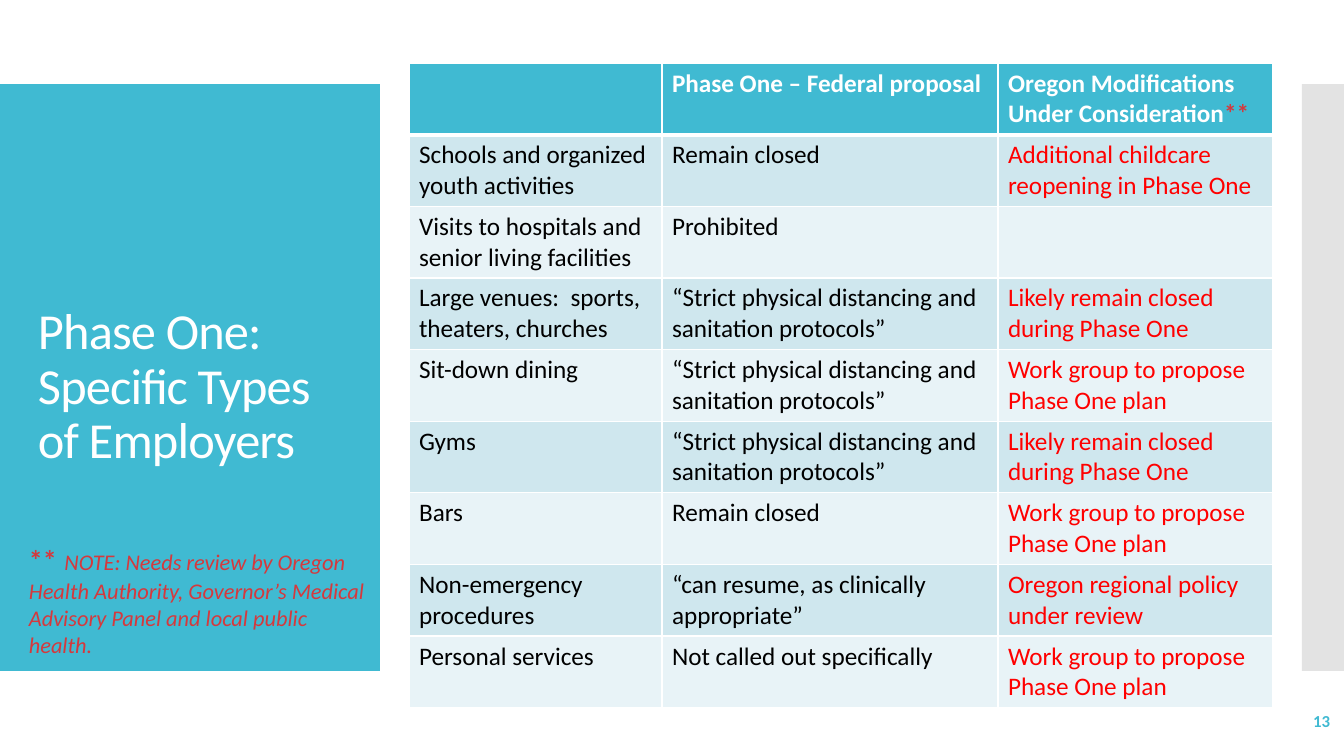
from lxml.etree import SubElement
from pptx import Presentation
from pptx.dml.color import RGBColor
from pptx.enum.shapes import MSO_SHAPE as Shape
from pptx.enum.text import MSO_ANCHOR as Anchor, PP_ALIGN as Align
from pptx.oxml.ns import qn
from pptx.util import Pt

EMU_PER_PX = 914400 / 100.8
COLORS = {
    "teal": "40BAD2", "gray": "C8C8C8", "white": "FFFFFF", "black": "000000",
    "red": "FF0000", "note": "D5393D", "band": "CFE7EE", "pale": "E8F3F7",
}
HEADER = ["", "Phase One – Federal proposal", "Oregon Modifications Under Consideration"]
DISTANCING = "“Strict physical distancing and sanitation protocols”"
LIKELY_CLOSED = "Likely remain closed during Phase One"
WORK_GROUP = "Work group to propose Phase One plan"
EMPLOYERS = [
    ["Schools and organized youth activities", "Remain closed",
     "Additional childcare reopening in Phase One"],
    ["Visits to hospitals and senior living facilities", "Prohibited", ""],
    ["Large venues:  sports, theaters, churches", DISTANCING, LIKELY_CLOSED],
    ["Sit-down dining", DISTANCING, WORK_GROUP],
    ["Gyms", DISTANCING, LIKELY_CLOSED],
    ["Bars", "Remain closed", WORK_GROUP],
    ["Non-emergency procedures", "“can resume, as clinically appropriate”",
     "Oregon regional policy under review"],
    ["Personal services", "Not called out specifically", WORK_GROUP],
]


def px(length):
    return round(length * EMU_PER_PX)


def rgb(name):
    return RGBColor.from_string(COLORS[name])


class SlideBuilder:
    font = "Calibri"

    def __init__(self, deck):
        self.slide = deck.slides.add_slide(deck.slide_layouts[6])

    def style(self, run, size, color, bold=False, italic=False):
        run.font.name = self.font
        run.font.size = Pt(size)
        run.font.bold = bold
        run.font.italic = italic
        run.font.color.rgb = rgb(color)

    def panel(self, box, color, opacity=100):
        panel = self.slide.shapes.add_shape(Shape.RECTANGLE, *map(px, box))
        panel.shadow.inherit = False
        panel.fill.solid()
        panel.fill.fore_color.rgb = rgb(color)
        panel.line.fill.background()
        if opacity < 100:
            tint = panel.fill._xPr.find(".//" + qn("a:srgbClr"))
            SubElement(tint, qn("a:alpha"), val=str(opacity * 1000))

    def text(self, box, runs, anchor=Anchor.MIDDLE, align=Align.LEFT, leading=1.0, spacing=0):
        frame = self.slide.shapes.add_textbox(*map(px, box)).text_frame
        frame.word_wrap = True
        frame.vertical_anchor = anchor
        paragraph = frame.paragraphs[0]
        paragraph.alignment = align
        paragraph.line_spacing = leading
        for words, *look in runs:
            run = paragraph.add_run()
            run.text = words
            self.style(run, *look)
            if spacing:
                run.font._element.set("spc", str(spacing))

    def cell(self, cell, words, fill, color, header=False):
        cell.text = words
        for run in cell.text_frame.paragraphs[0].runs:
            self.style(run, 18, color, header)
        properties = cell._tc.get_or_add_tcPr()
        for side in "LRTB":
            width = 3 if header and side == "B" else 1
            border = SubElement(properties, qn(f"a:ln{side}"), w=str(Pt(width)))
            paint = SubElement(border, qn("a:solidFill"))
            SubElement(paint, qn("a:srgbClr"), val=COLORS["white"])
        cell.fill.solid()
        cell.fill.fore_color.rgb = rgb(fill)

    def table(self, left, top, widths, row_height, header, rows):
        count = len(rows) + 1
        table = self.slide.shapes.add_table(
            count, len(widths), px(left), px(top), px(sum(widths)), px(row_height * count)
        ).table
        for column, width in zip(table.columns, widths):
            column.width = px(width)
        for row in table.rows:
            row.height = px(row_height)
        for c, words in enumerate(header):
            self.cell(table.cell(0, c), words, "teal", "white", header=True)
        for r, row in enumerate(rows, 1):
            for c, words in enumerate(row):
                self.cell(table.cell(r, c), words, "band" if r % 2 else "pale",
                          "red" if c == 2 else "black")
        return table


def main():
    deck = Presentation()
    deck.slide_width, deck.slide_height = px(1344), px(756)
    page = SlideBuilder(deck)
    page.panel((0, 84, 380, 587), "teal")
    page.panel((1302, 84, 42, 587), "gray", opacity=50)

    employers = page.table(409, 63, [253, 336, 275], 71, HEADER, EMPLOYERS)
    footnote_mark = employers.cell(0, 2).text_frame.paragraphs[0].add_run()
    footnote_mark.text = "**"
    page.style(footnote_mark, 18, "note", bold=True)

    page.text((1172, 701, 168, 40), [("13", 12, "teal", True)], align=Align.RIGHT)
    page.text((28, 283, 325, 210),
              [("Phase One: Specific Types of Employers", 36, "white")],
              leading=0.9, spacing=-60)
    page.text((19, 532, 362, 132), [
        ("**", 20, "note", True),
        (" ", 24, "note", True),
        ("NOTE: Needs review by Oregon Health Authority, Governor’s Medical "
         "Advisory Panel and local public health.", 16, "note", False, True),
    ], anchor=Anchor.TOP)
    deck.save("out.pptx")


if __name__ == "__main__":
    main()
